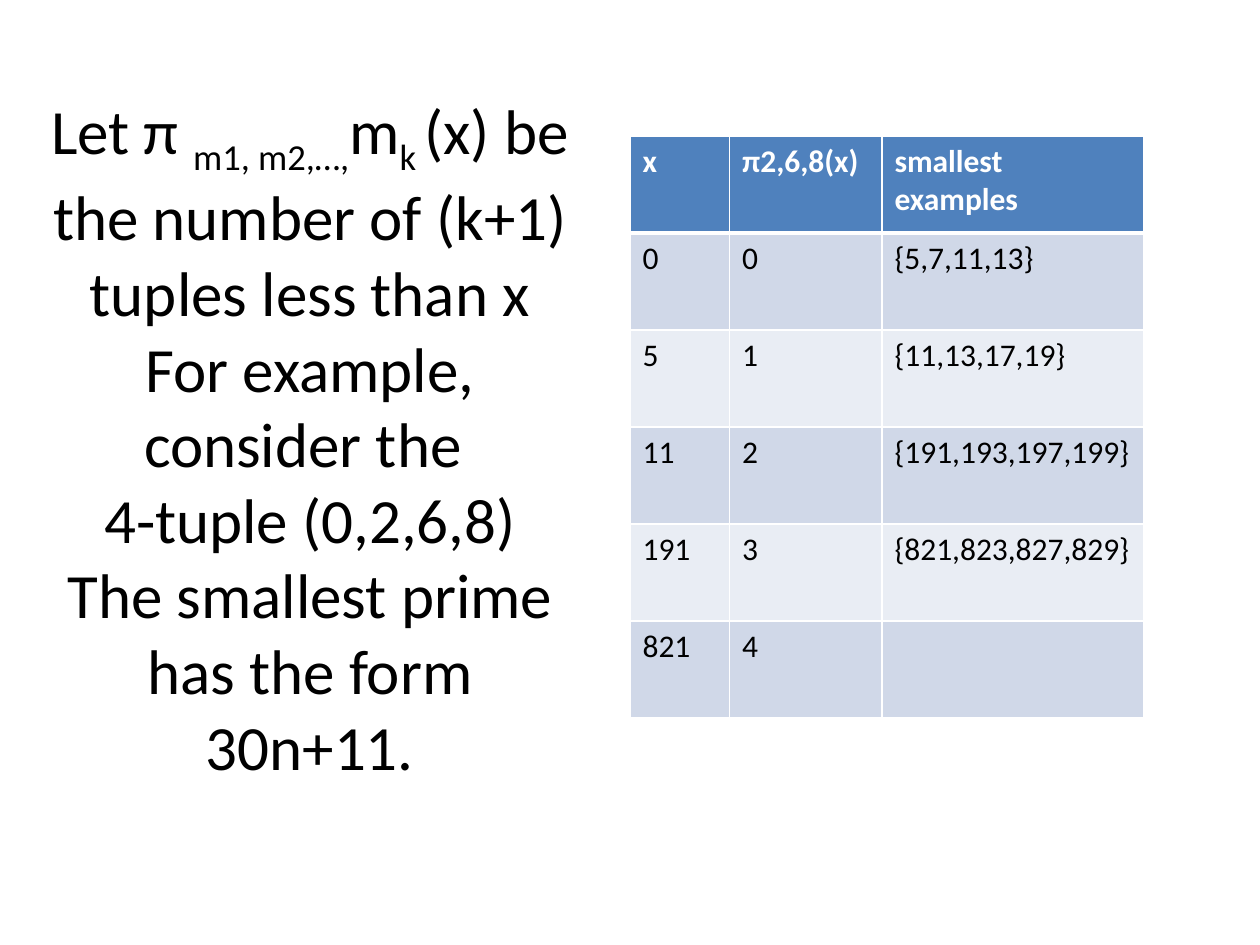
from lxml import etree
from pptx import Presentation
from pptx.dml.color import RGBColor
from pptx.enum.text import MSO_ANCHOR, PP_ALIGN
from pptx.oxml.ns import qn
from pptx.util import Inches, Pt

LEFT, CENTER = PP_ALIGN.LEFT, PP_ALIGN.CENTER
MIDDLE = MSO_ANCHOR.MIDDLE
FONT = "Calibri"
COLORS = {
    "white": "FFFFFF",
    "black": "000000",
    "head": "4F81BD",
    "odd": "D0D8E8",
    "even": "E9EDF4",
}
SUB = -25  # subscript offset in percent

# Runs of the title: text and baseline offset
TITLE = [
    ("Let π ", 0),
    ("m1, m2,…,", SUB),
    ("m", 0),
    ("k ", SUB),
    ("(x) be the number of (k+1) tuples less than x\n"
     "For example, consider the \n"
     "4-tuple (0,2,6,8)\n"
     "The smallest prime has the form 30n+11.", 0),
]
ROWS = [
    ("x", "π2,6,8(x)", "smallest examples"),
    ("0", "0", "{5,7,11,13}"),
    ("5", "1", "{11,13,17,19}"),
    ("11", "2", "{191,193,197,199}"),
    ("191", "3", "{821,823,827,829}"),
    ("821", "4", ""),
]
WIDTHS = (0.79, 1.21, 2.08)
HIGH = 0.77


def rgb(name):
    return RGBColor.from_string(COLORS[name])


def write(para, text, size=18, color="black", bold=False, base=0, align=LEFT):
    """Add text to a paragraph, with a line break at each newline."""
    para.alignment = align
    for num, line in enumerate(text.split("\n")):
        if num:
            para.add_line_break()
        run = para.add_run()
        run.text = line
        font = run.font
        font.name, font.size, font.bold = FONT, Pt(size), bold
        font.color.rgb = rgb(color)
        if base:
            font._element.set("baseline", str(base * 1000))


def add_title(slide, x, y, w, h):
    box = slide.shapes.add_textbox(Inches(x), Inches(y), Inches(w), Inches(h))
    frame = box.text_frame
    frame.word_wrap = True
    frame.vertical_anchor = MIDDLE
    for text, base in TITLE:
        write(frame.paragraphs[0], text, size=36, base=base, align=CENTER)


def edge(cell, side, width):
    """Draw one white border of a cell."""
    props = cell._tc.get_or_add_tcPr()
    line = etree.SubElement(props, qn(f"a:ln{side}"), w=str(Pt(width)))
    fill = etree.SubElement(line, qn("a:solidFill"))
    etree.SubElement(fill, qn("a:srgbClr"), val=COLORS["white"])


def add_table(slide, x, y):
    table = slide.shapes.add_table(
        len(ROWS), len(WIDTHS), Inches(x), Inches(y),
        Inches(sum(WIDTHS)), Inches(HIGH * len(ROWS))).table
    for col, width in zip(table.columns, WIDTHS):
        col.width = Inches(width)
    for r, row in enumerate(ROWS):
        table.rows[r].height = Inches(HIGH)
        head = r == 0
        shade = "head" if head else "odd" if r % 2 else "even"
        for c, text in enumerate(row):
            cell = table.cell(r, c)
            # Borders come before the fill; a thick rule follows the header
            for side in "LRT":
                edge(cell, side, 3 if side == "T" and r == 1 else 1)
            edge(cell, "B", 3 if head else 1)
            cell.fill.solid()
            cell.fill.fore_color.rgb = rgb(shade)
            if text:
                write(cell.text_frame.paragraphs[0], text, bold=head,
                      color="white" if head else "black")


def main():
    deck = Presentation()
    deck.slide_width, deck.slide_height = Inches(10), Inches(7.5)
    slide = deck.slides.add_slide(deck.slide_layouts[6])
    add_title(slide, 0.25, 0.33, 4.42, 6.28)
    add_table(slide, 5, 1.08)
    deck.save("out.pptx")


if __name__ == "__main__":
    main()
